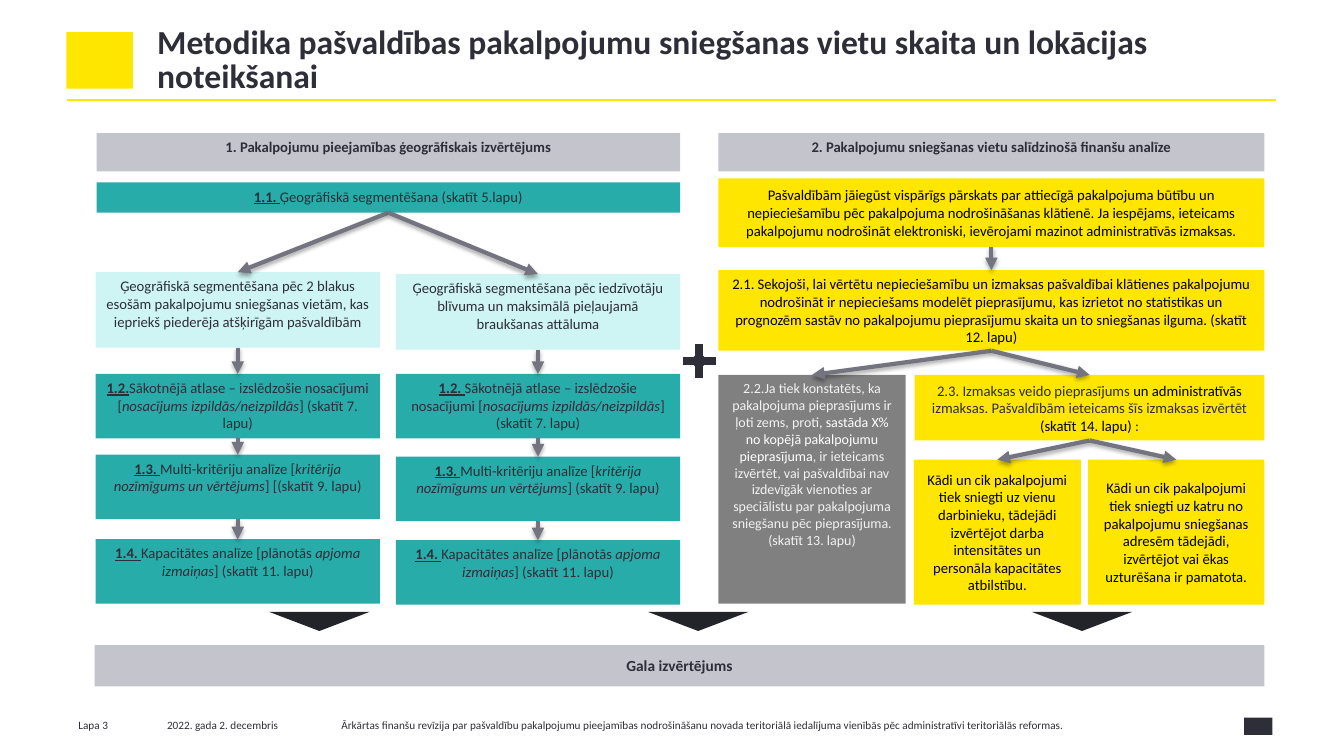
from dataclasses import dataclass
from itertools import pairwise

from lxml.etree import SubElement
from pptx import Presentation
from pptx.dml.color import RGBColor
from pptx.enum.shapes import MSO_CONNECTOR, MSO_SHAPE
from pptx.enum.text import MSO_ANCHOR, PP_ALIGN
from pptx.oxml.ns import qn
from pptx.util import Inches, Pt


@dataclass(frozen=True)
class Theme:
    font: str = "Calibri"
    ink: str = "2E2E38"
    black: str = "000000"
    white: str = "FFFFFF"
    pale: str = "F2F2F2"
    yellow: str = "FFE600"
    silver: str = "C4C4CD"
    grey: str = "808080"
    arrow: str = "747480"
    teal: str = "27ACAA"
    mint: str = "CEF4F3"
    dark: str = "23232A"
    title: float = 24
    result: float = 11
    body: float = 10.5
    small: float = 10
    footer: float = 8


THEME = Theme()
NUMBER = {"bold": True, "underline": True}
ITALIC = {"italic": True}
BLACK = {"color": THEME.black}
WHITE = {"color": THEME.white}


def rgb(color):
    return RGBColor.from_string(color)


def format_run(run, size, color=THEME.ink, bold=False, italic=False, underline=False):
    font = run.font
    font.name, font.size, font.color.rgb = THEME.font, Pt(size), rgb(color)
    font.bold, font.italic, font.underline = bold, italic, underline


def write(paragraph, parts, size=THEME.body, **base):
    """Write a string, or a list of (text, run format) pairs."""
    for text, style in [(parts, {})] if isinstance(parts, str) else parts:
        run = paragraph.add_run()
        run.text = text
        format_run(run, size, **{**base, **style})


def add_block(slide, left, top, width, height, fill, kind=MSO_SHAPE.RECTANGLE):
    block = slide.shapes.add_shape(
        kind, Inches(left), Inches(top), Inches(width), Inches(height))
    block.shadow.inherit = False
    block.fill.solid()
    block.fill.fore_color.rgb = rgb(fill)
    block.line.fill.background()
    return block


def add_box(slide, left, top, width, height, fill, parts, anchor=MSO_ANCHOR.TOP, **base):
    box = add_block(slide, left, top, width, height, fill)
    frame = box.text_frame
    frame.word_wrap, frame.vertical_anchor = True, anchor
    frame.paragraphs[0].alignment = PP_ALIGN.CENTER
    write(frame.paragraphs[0], parts, **base)
    return box


def add_rule(slide, start, end, color, width):
    rule = slide.shapes.add_connector(
        MSO_CONNECTOR.STRAIGHT, *(Inches(value) for value in start + end))
    rule.line.color.rgb, rule.line.width = rgb(color), Pt(width)
    return rule, SubElement(rule._element.spPr, qn("a:effectLst"))


def add_arrow(slide, source, target):
    arrow, effects = add_rule(slide, (0, 0), (1, 1), THEME.arrow, 3)
    arrow.begin_connect(source, 2)
    arrow.end_connect(target, 0)
    SubElement(arrow.line._get_or_add_ln(), qn("a:tailEnd"), type="triangle")
    shadow = SubElement(effects, qn("a:outerShdw"), blurRad="40000", dist="23000",
                        dir="5400000", rotWithShape="0")
    shade = SubElement(shadow, qn("a:srgbClr"), val=THEME.black)
    SubElement(shade, qn("a:alpha"), val="35000")


def add_heading(slide):
    title = slide.shapes.title
    title.left, title.top = Inches(1.56), Inches(0.27)
    title.width, title.height = Inches(11.12), Inches(0.65)
    frame = title.text_frame
    frame.text = "Metodika pašvaldības pakalpojumu sniegšanas vietu skaita un lokācijas noteikšanai"
    frame.margin_left = frame.margin_top = frame.margin_right = frame.margin_bottom = 0
    frame.vertical_anchor, frame.word_wrap = MSO_ANCHOR.TOP, True
    heading = frame.paragraphs[0]
    heading.alignment, heading.line_spacing = PP_ALIGN.LEFT, 0.85
    format_run(heading.runs[0], THEME.title, bold=True)
    add_block(slide, 0.66, 0.32, 0.66, 0.56, THEME.yellow)
    add_rule(slide, (0.67, 0.99), (12.67, 0.99), THEME.yellow, 1.5)


def add_segment_column(slide, left, top, offsets, segment, number_gap, bracket):
    """One segment followed by its three analysis steps."""
    width = 2.82
    steps = [
        [("1.2." + number_gap, NUMBER), ("Sākotnējā atlase – izslēdzošie nosacījumi [", {}),
         ("nosacījums izpildās/neizpildās", ITALIC), ("] (skatīt 7. lapu)", {})],
        [("1.3. ", NUMBER), ("Multi-kritēriju analīze [", {}),
         ("kritērija nozīmīgums un vērtējums", ITALIC), (f"] {bracket}(skatīt 9. lapu)", {})],
        [("1.4. ", NUMBER), ("Kapacitātes analīze [plānotās ", {}),
         ("apjoma izmaiņas", ITALIC), ("] (skatīt 11. lapu)", {})],
    ]
    boxes = [add_box(slide, left, top + offsets[0], width, 0.75, THEME.mint, segment)]
    boxes += [add_box(slide, left, top + offset, width, 0.64, THEME.teal, step)
              for offset, step in zip(offsets[1:], steps)]
    for source, target in pairwise(boxes):
        add_arrow(slide, source, target)
    return boxes[0]


def add_geographic_part(slide, left, top, width):
    add_box(slide, left, top, width, 0.38, THEME.silver,
            "1. Pakalpojumu pieejamības ģeogrāfiskais izvērtējums", bold=True)
    segmentation = add_box(
        slide, left, top + 0.49, width, 0.3, THEME.teal,
        [("1.1. ", NUMBER), ("Ģeogrāfiskā segmentēšana (skatīt 5.lapu)", {})])
    neighbours = add_segment_column(
        slide, left - 0.01, top, (1.38, 2.39, 3.19, 4.03),
        "Ģeogrāfiskā segmentēšana pēc 2 blakus esošām pakalpojumu sniegšanas vietām, "
        "kas iepriekš piederēja atšķirīgām pašvaldībām", "", "[")
    density = add_segment_column(
        slide, left + 2.97, top, (1.4, 2.39, 3.21, 4.04),
        "Ģeogrāfiskā segmentēšana pēc iedzīvotāju blīvuma un maksimālā pieļaujamā "
        "braukšanas attāluma", " ", "")
    for segment in (neighbours, density):
        add_arrow(slide, segmentation, segment)


def add_financial_part(slide, left, top, width):
    def yellow_box(x, y, box_width, height, parts, **base):
        return add_box(slide, left + x, top + y, box_width, height, THEME.yellow, parts,
                       MSO_ANCHOR.MIDDLE, **base)

    add_box(slide, left, top, width, 0.38, THEME.silver,
            "2. Pakalpojumu sniegšanas vietu salīdzinošā finanšu analīze", bold=True)
    overview = yellow_box(
        0, 0.45, width, 0.68,
        "Pašvaldībām jāiegūst vispārīgs pārskats par attiecīgā pakalpojuma būtību un "
        "nepieciešamību pēc pakalpojuma nodrošināšanas klātienē. Ja iespējams, ieteicams "
        "pakalpojumu nodrošināt elektroniski, ievērojami mazinot administratīvās izmaksas.",
        **BLACK)
    demand = yellow_box(
        0, 1.36, width, 0.8,
        "2.1. Sekojoši, lai vērtētu nepieciešamību un izmaksas pašvaldībai klātienes "
        "pakalpojumu nodrošināt ir nepieciešams modelēt pieprasījumu, kas izrietot no "
        "statistikas un prognozēm sastāv no pakalpojumu pieprasījumu skaita un to "
        "sniegšanas ilguma. (skatīt 12. lapu)", **BLACK)
    low_demand = add_box(
        slide, left, top + 2.4, 1.86, 2.27, THEME.grey,
        [("2.2.Ja tiek konstatēts, ka pakalpojuma pieprasījums ir ļoti zems, proti", {}),
         (", sastāda X% no kopējā pakalpojumu pieprasījuma", WHITE),
         (", ir ieteicams izvērtēt, vai pašvaldībai nav izdevīgāk vienoties ar speciālistu "
          "par pakalpojuma sniegšanu pēc pieprasījuma. (skatīt 13. lapu)", {})],
        size=THEME.small, color=THEME.pale)
    costs = yellow_box(
        1.95, 2.4, 3.47, 0.65,
        [("2.3. Izmaksas veido pieprasījums ", {}), ("un administratīvās ", BLACK),
         ("izmaksas. Pašvaldībām ieteicams šīs izmaksas izvērtēt ", {}),
         ("(skatīt 14. lapu) ", BLACK), (":", {})])
    per_employee = yellow_box(
        1.94, 3.24, 1.66, 1.44,
        "Kādi un cik pakalpojumi tiek sniegti uz vienu darbinieku, tādejādi izvērtējot "
        "darba intensitātes un personāla kapacitātes atbilstību.", **BLACK)
    per_address = yellow_box(
        3.67, 3.24, 1.75, 1.44,
        "Kādi un cik pakalpojumi tiek sniegti uz katru no pakalpojumu sniegšanas adresēm "
        "tādejādi, izvērtējot vai ēkas uzturēšana ir pamatota.", **BLACK)
    for source, target in ((overview, demand), (demand, low_demand), (demand, costs),
                           (costs, per_employee), (costs, per_address)):
        add_arrow(slide, source, target)


def add_result(slide, left, top, width):
    for x in (1.73, 5.49, 9.3):
        pointer = add_block(slide, left + x, top, 1, 0.19, THEME.dark,
                            MSO_SHAPE.ISOSCELES_TRIANGLE)
        pointer.rotation = 180
    add_box(slide, left, top + 0.33, width, 0.41, THEME.silver, "Gala izvērtējums",
            MSO_ANCHOR.MIDDLE, size=THEME.result, bold=True)


def add_footer(slide, top):
    for left, width, text in (
            (0.68, 0.73, "Lapa 3"),
            (1.56, 1.61, "2022. gada 2. decembris"),
            (3.29, 8.44, "Ārkārtas finanšu revīzija par pašvaldību pakalpojumu pieejamības "
             "nodrošināšanu novada teritoriālā iedalījuma vienībās pēc administratīvi "
             "teritoriālās reformas.")):
        note = slide.shapes.add_textbox(Inches(left), Inches(top), Inches(width), Inches(0.2))
        note.text_frame.word_wrap = True
        write(note.text_frame.paragraphs[0], text, size=THEME.footer)
    # Plain mark in the corner
    add_block(slide, 12.35, top + 0.04, 0.28, 0.17, THEME.ink)


def main():
    deck = Presentation()
    deck.slide_width, deck.slide_height = Inches(13.34), Inches(7.5)
    slide = deck.slides.add_slide(deck.slide_layouts[5])
    add_heading(slide)
    # Two analyses joined by a plus sign
    add_geographic_part(slide, 0.96, 1.32, 5.79)
    add_financial_part(slide, 7.13, 1.32, 5.42)
    plus = add_block(slide, 6.7, 3.33, 0.48, 0.5, THEME.ink, MSO_SHAPE.MATH_PLUS)
    plus.line.color.rgb, plus.line.width = rgb(THEME.white), Pt(2)
    # Conclusion and footer
    add_result(slide, 0.94, 6.07, 11.61)
    add_footer(slide, 7.08)
    deck.save("out.pptx")


if __name__ == "__main__":
    main()
